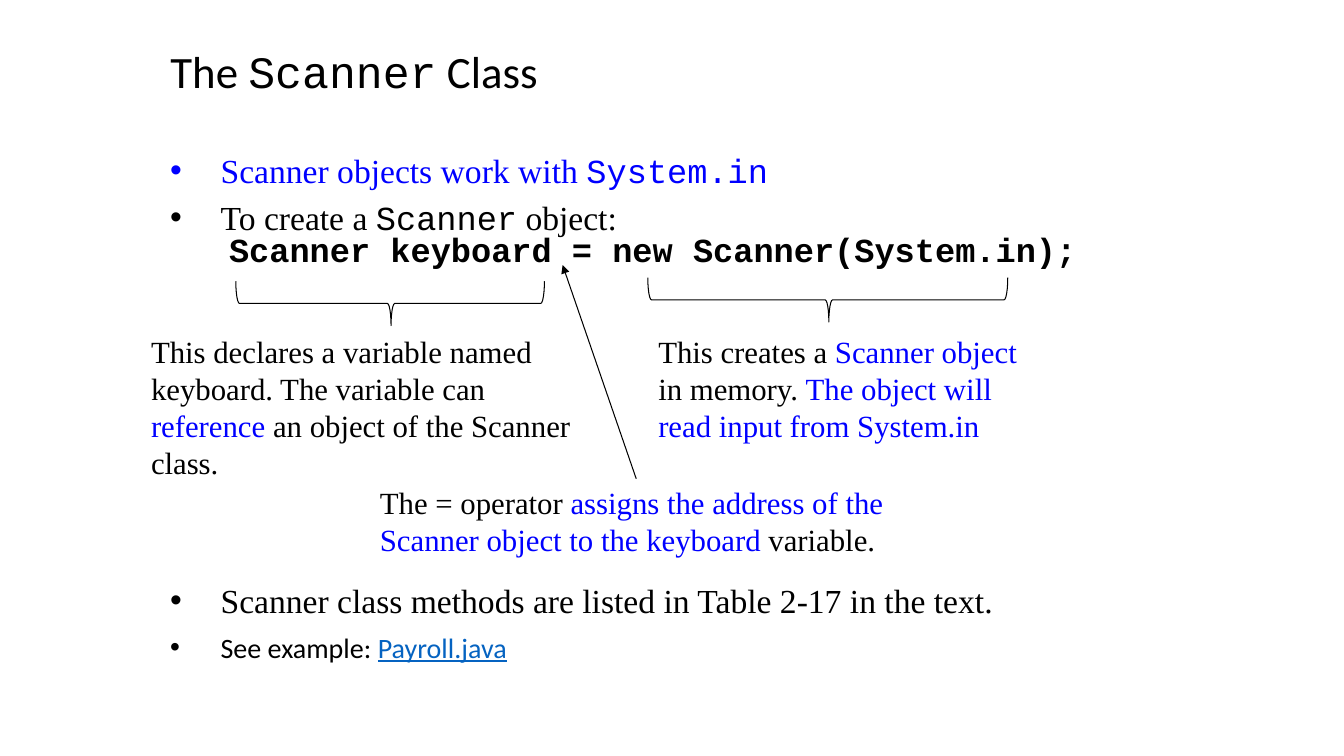
from dataclasses import dataclass

from lxml.etree import SubElement
from pptx import Presentation
from pptx.dml.color import RGBColor
from pptx.enum.shapes import MSO_CONNECTOR, MSO_SHAPE
from pptx.enum.text import MSO_ANCHOR, MSO_AUTO_SIZE, PP_ALIGN
from pptx.oxml.ns import qn
from pptx.util import Inches, Pt

PAGE_WIDTH, PAGE_HEIGHT = Inches(13.33), Inches(7.5)
BLACK, BLUE, LINK, WHITE = "000000", "0000FF", "0563C1", "FFFFFF"
SANS, SERIF, CODE = "Calibri", "Times New Roman", "Courier New"
LEFT_MARGIN = 11.93
NOTES_TOP = 43.33


@dataclass
class Box:
    """Left, top, width and height in percent of the page."""
    left: float
    top: float
    width: float
    height: float

    def lengths(self):
        return (across(self.left), down(self.top),
                across(self.width), down(self.height))


@dataclass
class Span:
    text: str
    font: str = SERIF
    color: str = BLACK
    bold: bool = False
    underline: bool = False


def across(percent):
    return round(PAGE_WIDTH * percent / 100)


def down(percent):
    return round(PAGE_HEIGHT * percent / 100)


def rgb(color):
    return RGBColor.from_string(color)


def write(para, spans, size):
    for span in spans:
        if span.text == "\n":
            para.add_line_break()
            continue
        run = para.add_run()
        run.text = span.text
        run.font.name = span.font
        run.font.size = Pt(size)
        run.font.bold = span.bold
        run.font.underline = span.underline
        run.font.color.rgb = rgb(span.color)


def add_bullet(para, indent):
    properties = para._p.get_or_add_pPr()
    properties.set("marL", str(indent))
    properties.set("indent", str(-indent))
    SubElement(properties, qn("a:buFont")).set("typeface", "Arial")
    SubElement(properties, qn("a:buChar")).set("char", "•")


def add_title(slide, box, spans):
    title = slide.shapes.title
    title.left, title.top, title.width, title.height = box.lengths()
    frame = title.text_frame
    frame.vertical_anchor = MSO_ANCHOR.MIDDLE
    para = frame.paragraphs[0]
    para.alignment = PP_ALIGN.LEFT
    para.line_spacing = 0.9
    write(para, spans, 32)


def add_text_frame(slide, box):
    frame = slide.shapes.add_textbox(*box.lengths()).text_frame
    frame.word_wrap = True
    return frame


def add_bullet_list(slide, box, items):
    frame = add_text_frame(slide, box)
    for index, (spans, size, space) in enumerate(items):
        para = frame.add_paragraph() if index else frame.paragraphs[0]
        para.line_spacing = 0.8
        para.space_before = Pt(space)
        add_bullet(para, Inches(0.5))
        write(para, spans, size)


def add_note(slide, box, spans):
    frame = add_text_frame(slide, box)
    frame.auto_size = MSO_AUTO_SIZE.SHAPE_TO_FIT_TEXT
    write(frame.paragraphs[0], spans, 22)


def add_brace_below(slide, box):
    left, top, span, depth = box.lengths()
    shift = (span - depth) // 2
    brace = slide.shapes.add_shape(
        MSO_SHAPE.LEFT_BRACE, left + shift, top - shift, depth, span)
    brace.rotation = 270
    brace.adjustments[0] = 0.083
    brace.adjustments[1] = 0.503
    brace.shadow.inherit = False
    brace.fill.solid()
    brace.fill.fore_color.rgb = rgb(WHITE)
    brace.line.color.rgb = rgb(BLACK)
    brace.line.width = Pt(0.75)


def add_arrow(slide, start, end):
    arrow = slide.shapes.add_connector(
        MSO_CONNECTOR.STRAIGHT, across(start[0]), down(start[1]),
        across(end[0]), down(end[1]))
    arrow.line.color.rgb = rgb(BLACK)
    arrow.line.width = Pt(0.75)
    SubElement(arrow.line._get_or_add_ln(), qn("a:tailEnd")).set("type", "triangle")
    SubElement(arrow._element.spPr, qn("a:effectLst"))


def add_scanner_slide(deck):
    slide = deck.slides.add_slide(deck.slide_layouts[5])
    add_title(slide, Box(LEFT_MARGIN, 2.53, 36.76, 14.53), [
        Span("The ", SANS), Span("Scanner", CODE), Span(" Class", SANS)])

    add_bullet_list(slide, Box(LEFT_MARGIN, 20.27, 72.69, 18), [
        ([Span("Scanner objects work with ", color=BLUE),
          Span("System.in", CODE, BLUE)], 24, 10),
        ([Span("To create a "), Span("Scanner", CODE), Span(" object:"),
          Span("\n"), Span(" "),
          Span("Scanner keyboard = new Scanner(System.in);", CODE, bold=True)],
         24, 10)])
    add_bullet_list(slide, Box(LEFT_MARGIN, 77.07, 72.69, 14.67), [
        ([Span("Scanner class methods are listed in Table 2-17 in the text.")],
         24, 0),
        ([Span("See example: ", SANS),
          Span("Payroll.java", SANS, LINK, underline=True)], 20, 12)])

    add_note(slide, Box(10.5, NOTES_TOP, 34.13, 21.07), [
        Span("This declares a variable named keyboard. The variable can "),
        Span("reference", color=BLUE),
        Span(" an object of the Scanner class.")])
    add_note(slide, Box(48.24, NOTES_TOP, 29.78, 16.13), [
        Span("This creates a "), Span("Scanner object ", color=BLUE),
        Span("in memory. "),
        Span("The object will read input from System.in", color=BLUE)])
    add_brace_below(slide, Box(48.2, 36.73, 26.78, 5.87))
    add_brace_below(slide, Box(17.55, 37.2, 22.96, 5.87))
    add_note(slide, Box(27.53, 63.33, 39.68, 11.2), [
        Span("The = operator "),
        Span("assigns the address of the Scanner object to the keyboard",
             color=BLUE),
        Span(" variable.")])
    add_arrow(slide, (47.34, 63.33), (41.86, 35.07))


def main():
    deck = Presentation()
    deck.slide_width, deck.slide_height = PAGE_WIDTH, PAGE_HEIGHT
    add_scanner_slide(deck)
    deck.save("out.pptx")


if __name__ == "__main__":
    main()
